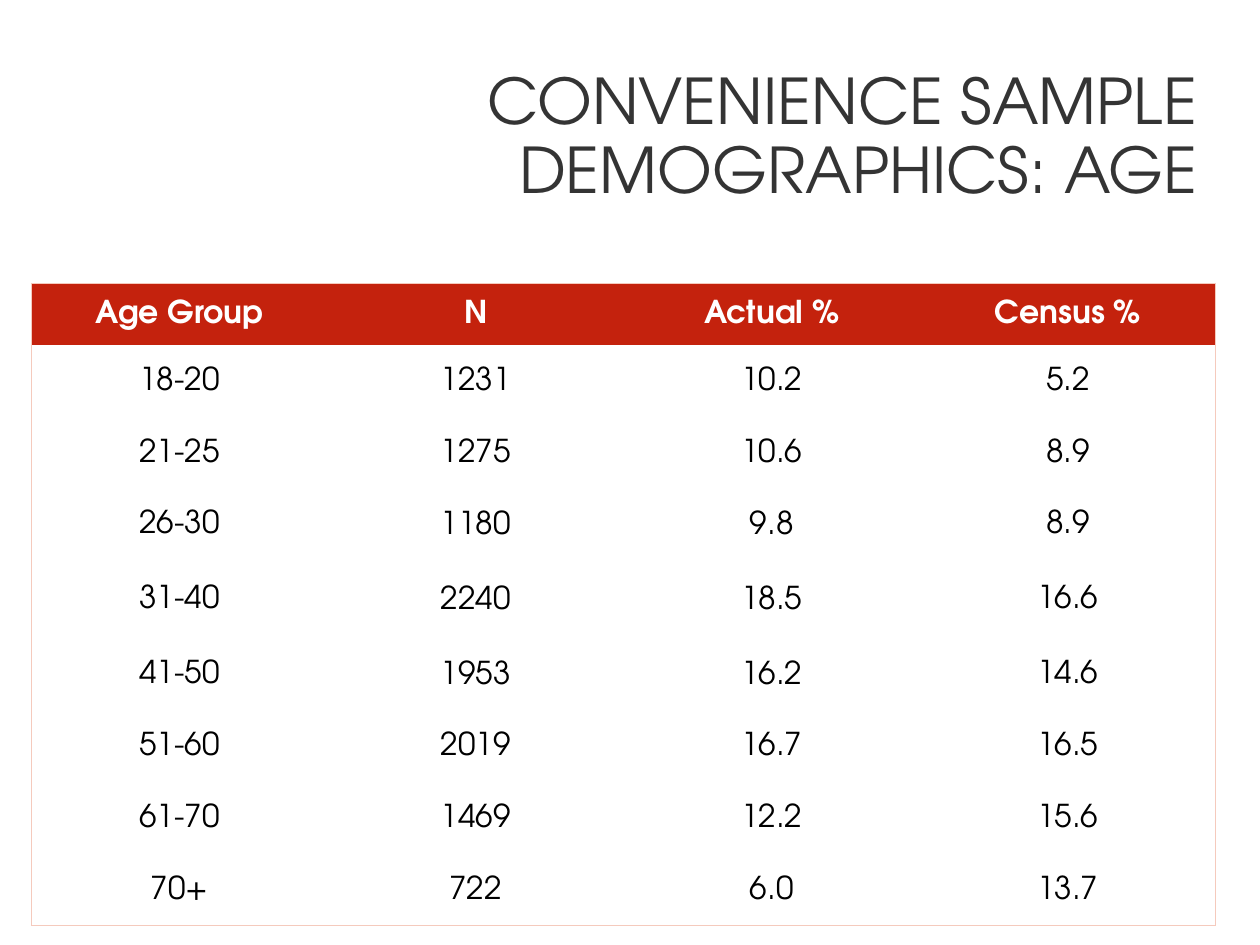
"""Build the slide on the age demographics of a convenience sample."""
from dataclasses import dataclass
from typing import Any

from lxml.etree import SubElement
from pptx import Presentation
from pptx.dml.color import RGBColor
from pptx.enum.text import MSO_ANCHOR as Anchor, PP_ALIGN as Align
from pptx.oxml.ns import qn
from pptx.util import Inches, Pt

RED = RGBColor(0xC4, 0x22, 0x0D)
PEACH = RGBColor(0xF5, 0xCA, 0xBD)
CHARCOAL = RGBColor(0x34, 0x34, 0x34)
WHITE = RGBColor(0xFF, 0xFF, 0xFF)
BLACK = RGBColor(0, 0, 0)
FONT = "TeX Gyre Adventor"
NO_STYLE = "{2D5ABB26-0587-4C30-8999-92F81FD0307C}"
COLUMN_WIDTH = 2.35
HEADER_HEIGHT, ROW_HEIGHT, TALL_HEIGHT = 0.49, 0.57, 0.62
TALL_GROUP = "31-40"


@dataclass(frozen=True)
class AgeGroup:
    ages: str
    count: str
    actual: str
    census: str

    def texts(self) -> tuple[str, ...]:
        return self.ages, self.count, self.actual, self.census


HEADINGS = AgeGroup("Age Group", "N", "Actual %", "Census %")
AGE_GROUPS = [
    AgeGroup("18-20", "1231", "10.2", "5.2"),
    AgeGroup("21-25", "1275", "10.6", "8.9"),
    AgeGroup("26-30", "1180", "9.8", "8.9"),
    AgeGroup("31-40", "2240", "18.5", "16.6"),
    AgeGroup("41-50", "1953", "16.2", "14.6"),
    AgeGroup("51-60", "2019", "16.7", "16.5"),
    AgeGroup("61-70", "1469", "12.2", "15.6"),
    AgeGroup("70+", "722", "6.0", "13.7"),
]
EDGE_INSETS = {"margin_left": Inches(0.01), "margin_right": Inches(0.01),
               "margin_top": Inches(0.01), "margin_bottom": 0}
INNER_INSETS = {"margin_left": Inches(0.04), "margin_right": Inches(0.04),
                "margin_top": 0, "margin_bottom": 0}


def apply(target: Any, values: dict[str, Any]) -> None:
    for name, value in values.items():
        setattr(target, name, value)


def write(paragraph: Any, text: str, size: int, color: RGBColor, bold: bool,
          layout: dict[str, Any]) -> None:
    run = paragraph.add_run()
    run.text = text
    apply(run.font, {"name": FONT, "size": Pt(size), "bold": bold})
    run.font.color.rgb = color
    apply(paragraph, layout)


def add_borders(cell: Any, sides: str) -> None:
    properties = cell._tc.get_or_add_tcPr()
    for side in sides:
        line = SubElement(properties, qn(f"a:ln{side}"), w=str(Pt(0.75)))
        fill = SubElement(line, qn("a:solidFill"))
        SubElement(fill, qn("a:srgbClr"), val=str(PEACH))


def add_title(slide: Any, text: str) -> None:
    title = slide.shapes.title
    apply(title, {"left": Inches(0.25), "top": Inches(0.62),
                  "width": Inches(9.35), "height": Inches(0.96)})
    apply(title.text_frame, {"word_wrap": True, "vertical_anchor": Anchor.MIDDLE})
    write(title.text_frame.paragraphs[0], text, 36, CHARCOAL, False,
          {"alignment": Align.RIGHT, "line_spacing": 0.9})


def add_age_table(slide: Any, groups: list[AgeGroup]) -> None:
    rows = [HEADINGS, *groups]
    heights = [HEADER_HEIGHT] + [
        TALL_HEIGHT if group.ages == TALL_GROUP else ROW_HEIGHT for group in groups]
    columns = len(HEADINGS.texts())
    table = slide.shapes.add_table(
        len(rows), columns, Inches(0.25), Inches(2.25),
        Inches(COLUMN_WIDTH * columns), Inches(sum(heights))).table
    table.horz_banding = False
    table._tbl.tblPr.find(qn("a:tableStyleId")).text = NO_STYLE
    for column in table.columns:
        column.width = Inches(COLUMN_WIDTH)
    last_row, last_column = len(rows) - 1, columns - 1
    for r, (group, height) in enumerate(zip(rows, heights)):
        table.rows[r].height = Inches(height)
        header = r == 0
        for c, text in enumerate(group.texts()):
            cell = table.cell(r, c)
            inner = not header and 0 < c < last_column
            apply(cell, INNER_INSETS if inner else EDGE_INSETS)
            cell.vertical_anchor = Anchor.MIDDLE
            on_edge = {"L": c == 0, "R": c == last_column,
                       "T": header, "B": r == last_row}
            add_borders(cell, "".join(side for side, here in on_edge.items() if here))
            cell.fill.solid()
            cell.fill.fore_color.rgb = RED if header else WHITE
            write(cell.text_frame.paragraphs[0], text, 18,
                  WHITE if header else BLACK, header,
                  {"alignment": Align.CENTER, "line_spacing": 1.07 if inner else 1.0})


def main() -> None:
    deck = Presentation()
    apply(deck, {"slide_width": Inches(10), "slide_height": Inches(7.5)})
    slide = deck.slides.add_slide(deck.slide_layouts.get_by_name("Title Only"))
    add_title(slide, "CONVENIENCE SAMPLE DEMOGRAPHICS: AGE")
    add_age_table(slide, AGE_GROUPS)
    deck.save("out.pptx")


if __name__ == "__main__":
    main()
